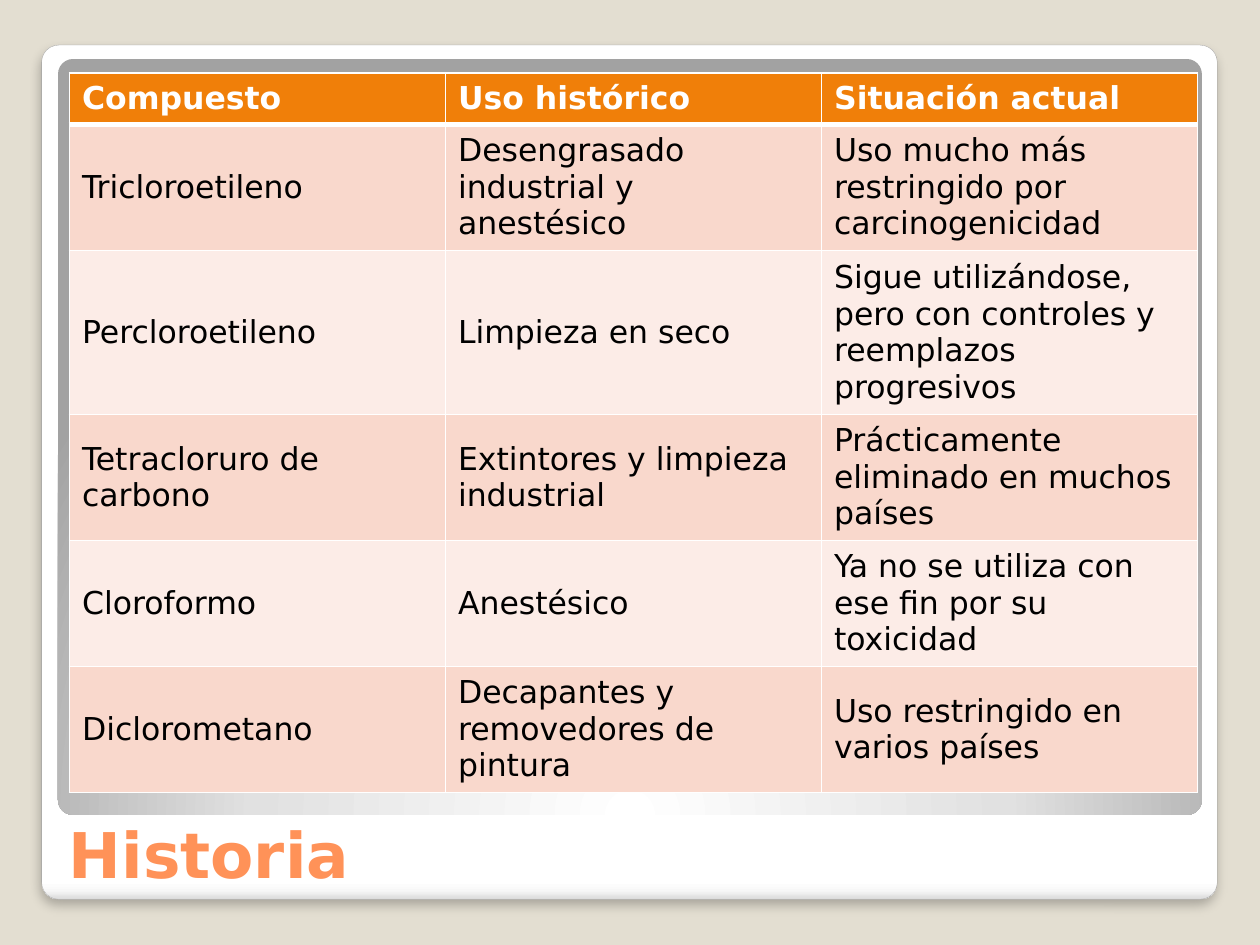
from dataclasses import dataclass

import pptx
import pptx.dml.color
import pptx.enum.shapes
import pptx.enum.text
import pptx.oxml
import pptx.oxml.ns
import pptx.util
from pptx.util import Cm

COLORS = {
    "background": "E3DED1",
    "title": "FF9258",
    "header": "F07F09",
    "odd_row": "F9D8CC",
    "even_row": "FCECE7",
    "white": "FFFFFF",
    "black": "000000",
    "panel_edge": "A4A4A4",
}
FONT = "DejaVu Sans"
MIDDLE = pptx.enum.text.MSO_ANCHOR.MIDDLE
BOTTOM = pptx.enum.text.MSO_ANCHOR.BOTTOM


@dataclass
class Panel:
    left: float
    top: float
    width: float
    height: float
    stops: list[tuple[int, str]]  # percent, hex colour
    direction: str  # XML for the gradient's direction
    outlined: bool = False


@dataclass
class Row:
    texts: tuple[str, str, str]
    height: float


PANELS = [
    Panel(0.84, 0.91, 23.7, 17.22,
          [(0, "FFFFFF"), (98, "FFFFFF"), (99, "F7F7F7"), (100, "DADADA")],
          '<a:lin ang="5400000" scaled="0"/>', outlined=True),
    Panel(1.17, 1.19, 23.06, 15.24,
          [(0, "FFFFFF"), (55, "E1E1E1"), (100, "A2A2A2")],
          '<a:path path="circle">'
          '<a:fillToRect l="50000" t="175000" r="50000" b="-75000"/></a:path>'),
]
ROWS = [
    Row(("Compuesto", "Uso histórico", "Situación actual"), 1.04),
    Row(("Tricloroetileno", "Desengrasado industrial y anestésico",
         "Uso mucho más restringido por carcinogenicidad"), 2.46),
    Row(("Percloroetileno", "Limpieza en seco",
         "Sigue utilizándose, pero con controles y reemplazos progresivos"), 3.2),
    Row(("Tetracloruro de carbono", "Extintores y limpieza industrial",
         "Prácticamente eliminado en muchos países"), 2.46),
    Row(("Cloroformo", "Anestésico",
         "Ya no se utiliza con ese fin por su toxicidad"), 2.46),
    Row(("Diclorometano", "Decapantes y removedores de pintura",
         "Uso restringido en varios países"), 2.46),
]
COLUMN_WIDTH = 7.58


def rgb(name: str) -> pptx.dml.color.RGBColor:
    return pptx.dml.color.RGBColor.from_string(COLORS[name])


def xml(tag: str, attributes: str, content: str):
    namespace = pptx.oxml.ns.nsdecls("a")
    return pptx.oxml.parse_xml(
        f"<a:{tag} {namespace} {attributes}>{content}</a:{tag}>")


def write(frame, text: str, *, size: float, color: str, bold: bool = False) -> None:
    frame.word_wrap = True
    run = frame.paragraphs[0].add_run()
    run.text = text
    run.font.name = FONT
    run.font.size = pptx.util.Pt(size)
    run.font.bold = bold
    run.font.color.rgb = rgb(color)


def draw_panel(slide, panel: Panel) -> None:
    shape = slide.shapes.add_shape(
        pptx.enum.shapes.MSO_SHAPE.ROUNDED_RECTANGLE,
        Cm(panel.left), Cm(panel.top), Cm(panel.width), Cm(panel.height))
    shape.adjustments[0] = 0.02
    shape.shadow.inherit = False
    shape.fill.background()
    stops = "".join(
        f'<a:gs pos="{percent * 1000}"><a:srgbClr val="{color}"/></a:gs>'
        for percent, color in panel.stops)
    properties = shape.element.spPr
    properties.replace(
        properties.find(pptx.oxml.ns.qn("a:noFill")),
        xml("gradFill", 'rotWithShape="1"',
            f"<a:gsLst>{stops}</a:gsLst>{panel.direction}"))
    if not panel.outlined:
        shape.line.fill.background()
        return
    shape.line.color.rgb = rgb("panel_edge")
    shape.line.width = pptx.util.Pt(0.16)
    properties.find(pptx.oxml.ns.qn("a:effectLst")).append(
        xml("outerShdw", 'blurRad="76200" dist="50800" dir="5400000" rotWithShape="0"',
            f'<a:srgbClr val="{COLORS["black"]}"><a:alpha val="25000"/></a:srgbClr>'))


def set_borders(cell, top: int, bottom: int) -> None:
    """Give a cell white borders, with the top and bottom widths in points."""
    sides = {"lnL": 1, "lnR": 1, "lnT": top, "lnB": bottom}
    for position, (side, points) in enumerate(sides.items()):
        border = xml(side, f'w="{pptx.util.Pt(points)}"',
                     f'<a:solidFill><a:srgbClr val="{COLORS["white"]}"/></a:solidFill>')
        cell._tc.get_or_add_tcPr().insert(position, border)


def draw_table(slide, rows: list[Row]) -> None:
    column_count = len(rows[0].texts)
    table = slide.shapes.add_table(
        len(rows), column_count, Cm(1.4), Cm(1.47),
        Cm(COLUMN_WIDTH * column_count), Cm(sum(row.height for row in rows))).table
    for column in table.columns:
        column.width = Cm(COLUMN_WIDTH)
    for index, row in enumerate(rows):
        table.rows[index].height = Cm(row.height)
        is_header = index == 0
        fill = "header" if is_header else "odd_row" if index % 2 else "even_row"
        for cell, text in zip(table.rows[index].cells, row.texts):
            cell.vertical_anchor = MIDDLE
            cell.fill.solid()
            cell.fill.fore_color.rgb = rgb(fill)
            set_borders(cell, top=3 if index == 1 else 1, bottom=3 if is_header else 1)
            write(cell.text_frame, text, size=18, bold=is_header,
                  color="white" if is_header else "black")


def draw_title(slide, text: str) -> None:
    frame = slide.shapes.add_textbox(
        Cm(1.19), Cm(15.09), Cm(22.73), Cm(2.92)).text_frame
    frame.vertical_anchor = BOTTOM
    frame.margin_left = Cm(0.2)
    frame.margin_bottom = Cm(0.05)
    write(frame, text, size=36, color="title", bold=True)


def main() -> None:
    presentation = pptx.Presentation()
    presentation.slide_width = Cm(25.4)
    presentation.slide_height = Cm(19.05)
    slide = presentation.slides.add_slide(presentation.slide_layouts[6])

    # Background and framed panels
    slide.background.fill.solid()
    slide.background.fill.fore_color.rgb = rgb("background")
    for panel in PANELS:
        draw_panel(slide, panel)

    # Title and table of compounds
    draw_title(slide, "Historia")
    draw_table(slide, ROWS)

    presentation.save("out.pptx")


if __name__ == "__main__":
    main()
